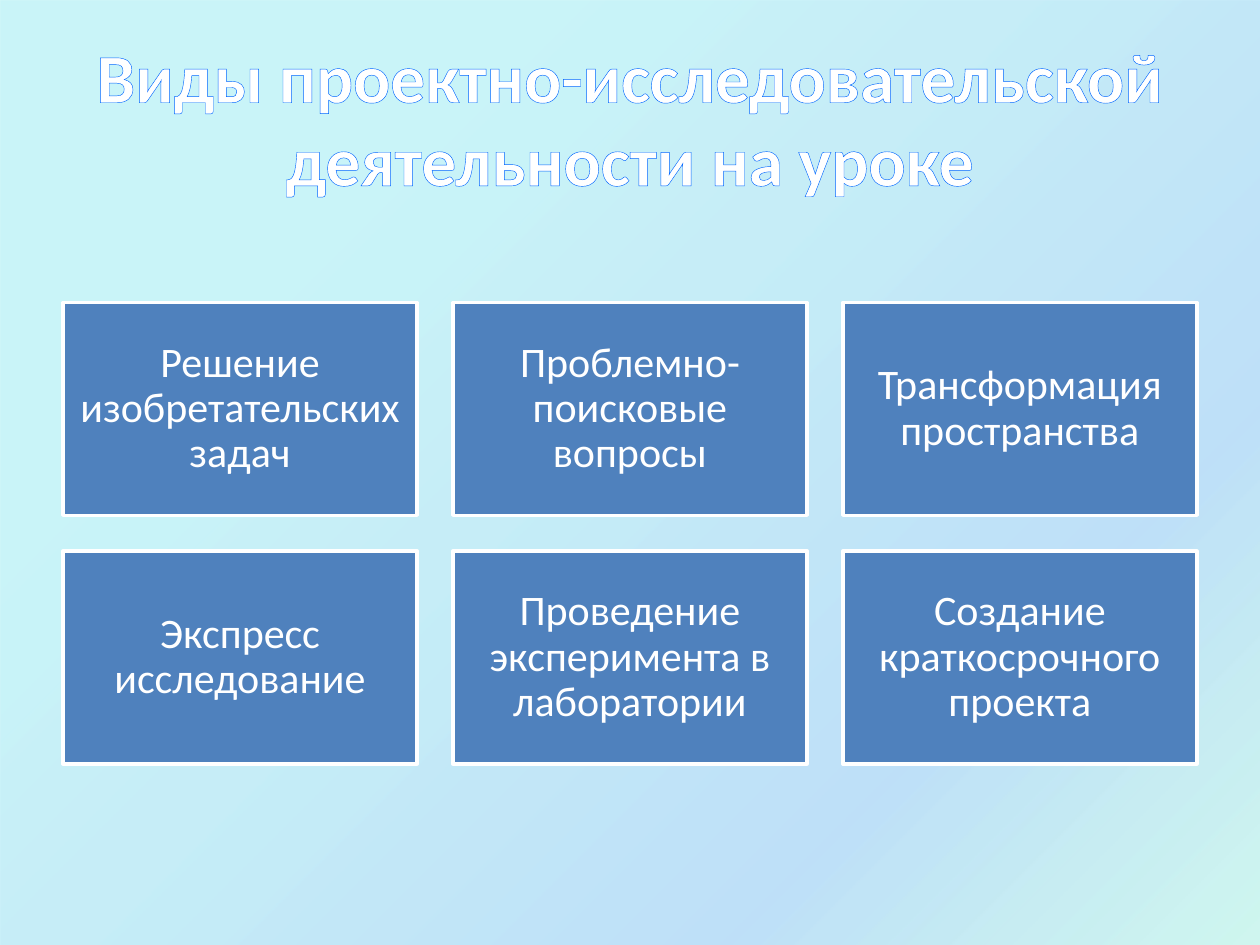
from lxml import etree
from pptx import Presentation
from pptx import util as u
from pptx.dml.color import RGBColor
from pptx.enum import shapes, text
from pptx.oxml import ns

HUES = {"white": "FFFFFF", "edge": "0066FF", "box": "4F81BD",
        "cyan": "21D6E0", "blue": "0087E6", "mint": "03D4A8", "navy": "005CBF"}
STOPS = [(25, "cyan", 23), (75, "blue", 25), (100, "mint", 18), (100, "navy", 26)]
KINDS = ["Решение изобретательских задач", "Проблемно-поисковые вопросы",
         "Трансформация пространства", "Экспресс исследование",
         "Проведение эксперимента в лаборатории", "Создание краткосрочного проекта"]
COLS = 3


def hue(name):
    return RGBColor.from_string(HUES[name])


def node(top, tag, **attrs):
    return etree.SubElement(top, ns.qn(tag), {k: str(v) for k, v in attrs.items()})


class Deck:
    font = "Calibri"

    def __init__(self, slide):
        self.slide = slide

    def rect(self, x, y, w, h):
        shape = self.slide.shapes.add_shape(
            shapes.MSO_SHAPE.RECTANGLE, u.Cm(x), u.Cm(y), u.Cm(w), u.Cm(h))
        shape.shadow.inherit = False
        return shape

    def label(self, frame, words, size, bold=False):
        frame.word_wrap = True
        frame.vertical_anchor = text.MSO_ANCHOR.MIDDLE
        para = frame.paragraphs[0]
        para.alignment = text.PP_ALIGN.CENTER
        run = para.add_run()
        run.text = words
        run.font.name = self.font
        run.font.size = u.Pt(size)
        run.font.bold = bold
        run.font.color.rgb = hue("white")
        return para, run

    def wash(self, w, h, stops):
        shape = self.rect(0, 0, w, h)
        shape.line.fill.background()
        shape.fill.background()
        blank = shape._element.spPr.find(ns.qn("a:noFill"))
        grad = etree.Element(ns.qn("a:gradFill"), rotWithShape="1")
        row = node(grad, "a:gsLst")
        for pos, name, alpha in stops:
            stop = node(row, "a:gs", pos=pos * 1000)
            tint = node(stop, "a:srgbClr", val=HUES[name])
            node(tint, "a:alpha", val=alpha * 1000)
        node(grad, "a:lin", ang=45 * 60000, scaled=0)
        blank.getparent().replace(blank, grad)

    def title(self, words, x, y, w, h):
        head = self.slide.shapes.title
        head.left, head.top, head.width, head.height = map(u.Cm, (x, y, w, h))
        head.text_frame.auto_size = text.MSO_AUTO_SIZE.NONE
        run = self.label(head.text_frame, words, 39.6, True)[1]
        line = etree.Element(ns.qn("a:ln"), w=str(u.Pt(1.45)))
        node(node(line, "a:solidFill"), "a:srgbClr", val=HUES["edge"])
        run._r.get_or_add_rPr().insert(0, line)

    def box(self, words, x, y, w, h):
        shape = self.rect(x, y, w, h)
        shape.fill.solid()
        shape.fill.fore_color.rgb = hue("box")
        shape.line.color.rgb = hue("white")
        shape.line.width = u.Pt(2)
        frame = shape.text_frame
        frame.margin_left = frame.margin_right = u.Cm(0.25)
        frame.margin_top = frame.margin_bottom = u.Cm(0.25)
        self.label(frame, words, 24)[0].line_spacing = 0.9


def main():
    prs = Presentation()
    prs.slide_width, prs.slide_height = u.Cm(25.4), u.Cm(19.05)
    deck = Deck(prs.slides.add_slide(prs.slide_layouts[5]))
    deck.wash(25.4, 19.48, STOPS)
    tree = deck.slide.shapes._spTree
    tree.append(deck.slide.shapes.title._element)
    deck.title("Виды проектно-исследовательской деятельности на уроке",
               1.27, 0.76, 22.86, 3.18)
    wide, high, gap = 7.14, 4.29, 0.72
    for i, words in enumerate(KINDS):
        row, col = divmod(i, COLS)
        deck.box(words, 1.27 + col * (wide + gap), 6.1 + row * (high + gap), wide, high)
    prs.save("out.pptx")


if __name__ == "__main__":
    main()
